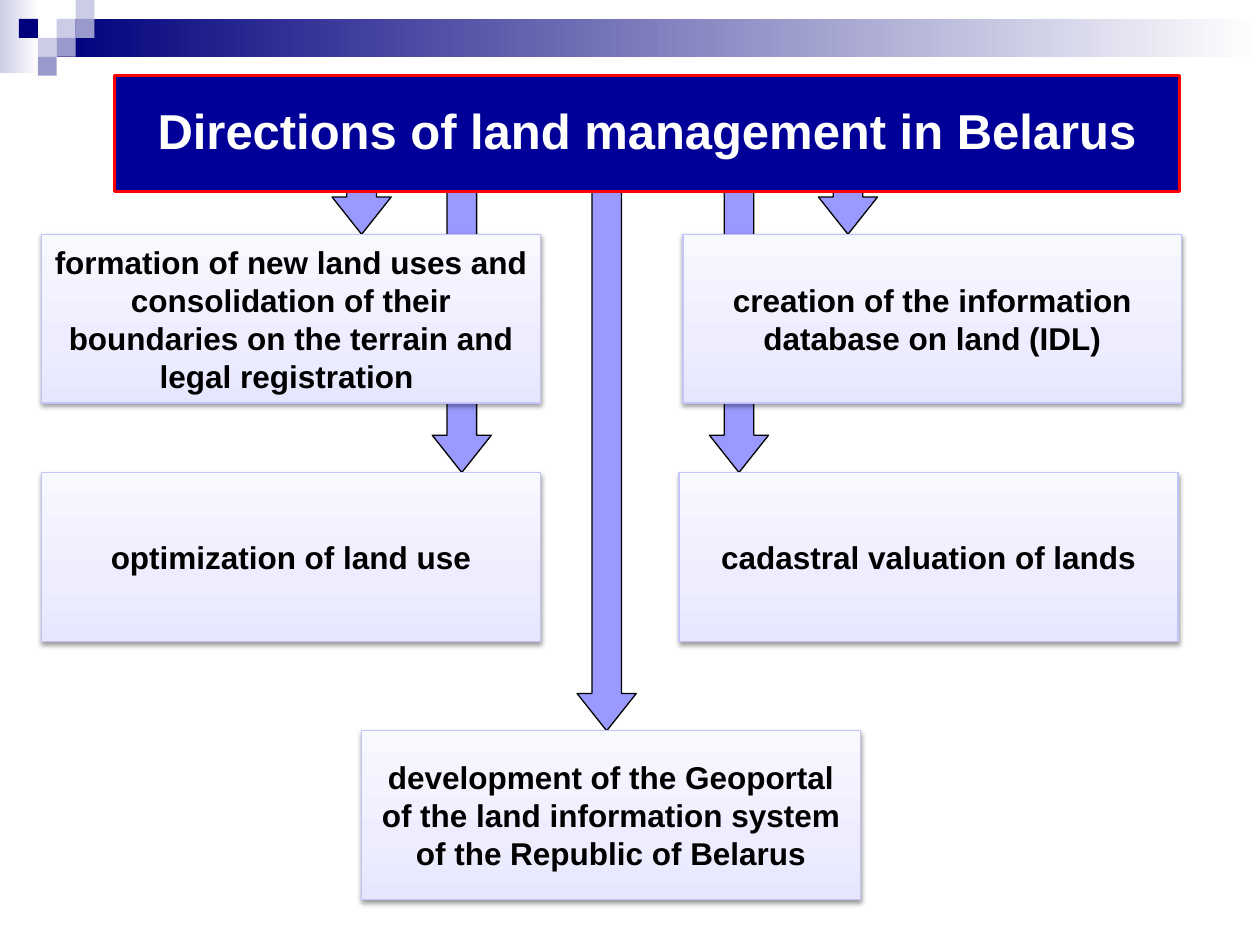
from lxml.etree import SubElement
from pptx import Presentation
from pptx.dml.color import RGBColor
from pptx.enum.shapes import MSO_SHAPE
from pptx.enum.text import MSO_ANCHOR, MSO_AUTO_SIZE, PP_ALIGN
from pptx.oxml.ns import qn
from pptx.util import Inches, Pt

COLS, ROWS = 100, 75
COLORS = {
    "navy": "00007D", "title": "000099", "red": "FF0000", "white": "FFFFFF",
    "black": "000000", "pale": "CCCCE6", "mid": "9999CC", "arrow": "9999FF",
    "edge": "C4C4FB", "card_low": "E6E6FF", "card_mid": "EDEDFF", "card_top": "F8F8FF",
}
CARD_STOPS = [(0, "card_low"), (35, "card_mid"), (100, "card_top")]
CARD_W, CARD_H = 39.6, 13.4
ARROW_W = 4.7
SQUARE = 1.5


class Deck:
    font = "Arial"

    def __init__(self):
        self.prs = Presentation()
        self.prs.slide_width, self.prs.slide_height = Inches(10), Inches(7.5)
        self.s = self.prs.slides.add_slide(self.prs.slide_layouts[5])

    def x(self, cols):
        return round(self.prs.slide_width * cols / COLS)

    def y(self, rows):
        return round(self.prs.slide_height * rows / ROWS)

    def rgb(self, name):
        return RGBColor.from_string(COLORS[name])

    def paint(self, sp, fill, line=None, width=0.75):
        sp.fill.solid()
        sp.fill.fore_color.rgb = self.rgb(fill)
        if line:
            sp.line.color.rgb = self.rgb(line)
            sp.line.width = Pt(width)
        else:
            sp.line.fill.background()

    def gradient(self, sp, stops, angle=0):
        sp.fill.gradient()
        sp.fill.gradient_angle = angle
        gs_list = sp._element.spPr.find(qn("a:gradFill")).find(qn("a:gsLst"))
        for gs in list(gs_list):
            gs_list.remove(gs)
        for pos, color in stops:
            gs = SubElement(gs_list, qn("a:gs"), pos=str(pos * 1000))
            SubElement(gs, qn("a:srgbClr"), val=COLORS[color])

    def drop_shadow(self, sp):
        effects = sp._element.spPr.find(qn("a:effectLst"))
        shadow = SubElement(effects, qn("a:outerShdw"), blurRad=str(Pt(3.1)),
                            dist=str(Pt(1.6)), dir="5400000", rotWithShape="0")
        color = SubElement(shadow, qn("a:srgbClr"), val=COLORS["black"])
        SubElement(color, qn("a:alpha"), val="38000")

    def label(self, sp, text, size, color):
        tf = sp.text_frame
        tf.text = text
        tf.word_wrap = True
        tf.auto_size = MSO_AUTO_SIZE.NONE
        tf.vertical_anchor = MSO_ANCHOR.MIDDLE
        p = tf.paragraphs[0]
        p.alignment = PP_ALIGN.CENTER
        font = p.runs[0].font
        font.name, font.size, font.bold = self.font, Pt(size), True
        font.color.rgb = self.rgb(color)
        return p

    def rect(self, col, row, w, h, fill="white", line=None):
        sp = self.s.shapes.add_shape(MSO_SHAPE.RECTANGLE, self.x(col), self.y(row),
                                     self.x(w), self.y(h))
        sp.shadow.inherit = False
        self.paint(sp, fill, line)
        return sp

    def fade(self, col, row, w, h, color):
        self.gradient(self.rect(col, row, w, h), [(0, color), (100, "white")])

    def down_arrow(self, center, top, tip):
        length = tip - top
        sp = self.s.shapes.add_shape(
            MSO_SHAPE.NOTCHED_RIGHT_ARROW, self.x(center - length / 2),
            self.y((top + tip - ARROW_W) / 2), self.x(length), self.y(ARROW_W))
        sp.rotation = 90
        sp.adjustments[0], sp.adjustments[1] = 0.5, 0.63
        sp.shadow.inherit = False
        self.paint(sp, "arrow", "black")

    def title(self, text, col, row, w, h):
        sp = self.s.shapes.title
        self.s.shapes._spTree.append(sp._element)
        sp.left, sp.top, sp.width, sp.height = self.x(col), self.y(row), self.x(w), self.y(h)
        self.paint(sp, "title", "red", 2)
        self.label(sp, text, 28, "white").line_spacing = 0.9

    def card(self, text, col, row):
        sp = self.rect(col, row, CARD_W, CARD_H, line="edge")
        self.gradient(sp, CARD_STOPS, 90)
        self.drop_shadow(sp)
        self.label(sp, text, 18, "black")


def main():
    deck = Deck()
    deck.fade(0, 0, 3.1, 5.8, "pale")
    deck.fade(4.5, 1.5, 95.5, 3, "navy")
    squares = [(3, 1, "pale"), (4, 0, "pale"), (4, 1, "mid"), (2, 2, "pale"),
               (1, 1, "navy"), (3, 2, "mid"), (2, 3, "mid")]
    for col, row, color in squares:
        deck.rect(col * SQUARE, row * SQUARE, SQUARE, SQUARE, color)

    top_row, middle_row, bottom_row = 18.6, 37.5, 58
    arrows = [(48.15, 13.1, bottom_row), (36.65, 11.6, middle_row),
              (58.65, 11.6, middle_row), (67.3, 8, top_row), (28.7, 8, top_row)]
    for center, top, tip in arrows:
        deck.down_arrow(center, top, tip)

    deck.title("Directions of land management in Belarus", 9.1, 6, 84.5, 9.2)
    cards = [
        ("formation of new land uses and consolidation of their boundaries "
         "on the terrain and legal registration ", 3.3, top_row),
        ("creation of the information database on land (IDL)", 54.2, top_row),
        ("optimization of land use", 3.3, middle_row),
        ("cadastral valuation of lands", 53.9, middle_row),
        ("development of the Geoportal of the land information system "
         "of the Republic of Belarus", 28.7, bottom_row),
    ]
    for text, col, row in cards:
        deck.card(text, col, row)
    deck.prs.save("out.pptx")


if __name__ == "__main__":
    main()
